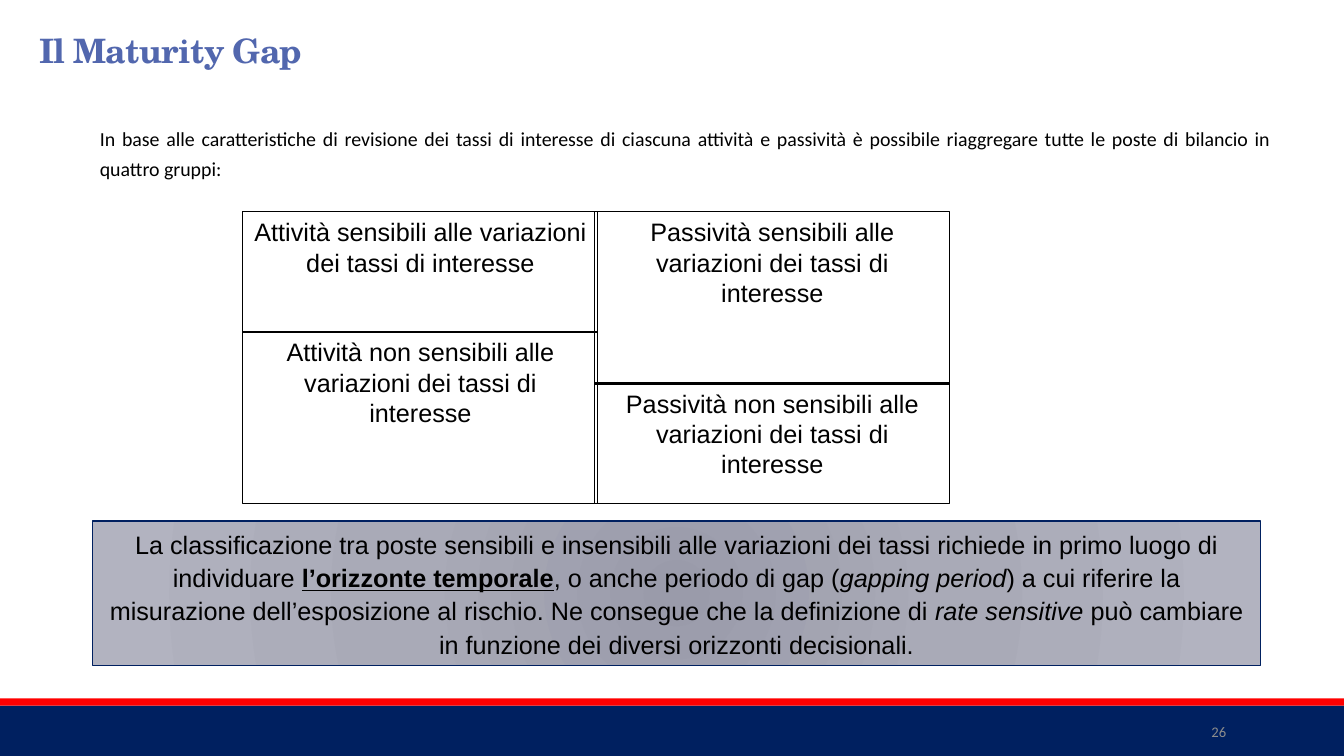
import pptx
import pptx.dml.color
import pptx.enum.shapes
import pptx.enum.text
import pptx.oxml
import pptx.oxml.ns
import pptx.util

Inches = pptx.util.Inches
Align = pptx.enum.text.PP_ALIGN
Anchor = pptx.enum.text.MSO_ANCHOR


class Theme:
    """Colours, fonts and type sizes of the slide."""
    navy, red, black = "002060", "FF0000", "000000"
    title_blue, grey = "5267AE", "8C8C8C"
    gradient = ((0, "9A9BAA"), (45, "A9AAB7"), (100, "B2B3C0"))
    title = {"name": "TeX Gyre Schola", "size": 24, "color": title_blue, "bold": True}
    intro = {"name": "Calibri", "size": 14.2, "color": black}
    body = {"name": "Arial", "size": 18, "color": black}
    number = {"name": "Calibri", "size": 10.5, "color": grey}


class SlideBuilder:
    def __init__(self, presentation, theme):
        self.theme = theme
        self.slide = presentation.slides.add_slide(presentation.slide_layouts[6])

    def fill_text(self, shape, runs, font, paragraph_format, frame_format=None):
        """Fill a shape with one paragraph made of (text, extra font values) runs."""
        frame = shape.text_frame
        frame_values = {"word_wrap": True, "vertical_anchor": Anchor.TOP}
        for name, value in {**frame_values, **(frame_format or {})}.items():
            setattr(frame, name, value)
        paragraph = frame.paragraphs[0]
        for name, value in paragraph_format.items():
            setattr(paragraph, name, value)
        for text, extra in runs:
            run = paragraph.add_run()
            run.text = text
            values = {**font, **extra}
            run.font.color.rgb = pptx.dml.color.RGBColor.from_string(values.pop("color"))
            values["size"] = pptx.util.Pt(values["size"])
            for name, value in values.items():
                setattr(run.font, name, value)

    def text(self, box, text, font, paragraph_format, frame_format=None):
        shape = self.slide.shapes.add_textbox(*map(Inches, box))
        self.fill_text(shape, [(text, {})], font, paragraph_format, frame_format)
        return shape

    def rectangle(self, box, fill=None, line=None, line_width=0.75):
        shape = self.slide.shapes.add_shape(
            pptx.enum.shapes.MSO_SHAPE.RECTANGLE, *map(Inches, box))
        shape.shadow.inherit = False
        for part, color in ((shape.fill, fill), (shape.line.fill, line)):
            if color:
                part.solid()
                part.fore_color.rgb = pptx.dml.color.RGBColor.from_string(color)
            else:
                part.background()
        if line:
            shape.line.width = pptx.util.Pt(line_width)
        return shape

    def radial_fill(self, shape, stops):
        """Give a shape a circular gradient around its centre."""
        shape.fill.gradient()
        properties = shape._element.spPr
        stop_xml = "".join(
            f'<a:gs pos="{position * 1000}"><a:srgbClr val="{color}"/></a:gs>'
            for position, color in stops)
        gradient = pptx.oxml.parse_xml(
            f'<a:gradFill {pptx.oxml.ns.nsdecls("a")} rotWithShape="1">'
            f'<a:gsLst>{stop_xml}</a:gsLst><a:path path="circle">'
            '<a:fillToRect l="100000" t="100000" r="100000" b="100000"/>'
            '</a:path></a:gradFill>')
        properties.replace(properties.find(pptx.oxml.ns.qn("a:gradFill")), gradient)


def main():
    presentation = pptx.Presentation()
    presentation.slide_width = Inches(13.33)
    presentation.slide_height = Inches(7.5)
    theme = Theme()
    builder = SlideBuilder(presentation, theme)

    # Footer bands and page number
    builder.rectangle((0, 7, 13.33, 0.5), fill=theme.navy)
    builder.rectangle((0, 6.93, 13.33, 0.07), fill=theme.red)
    builder.text((10.83, 7.06, 1.43, 0.4), "26", theme.number,
                 {"alignment": Align.RIGHT}, {"vertical_anchor": Anchor.MIDDLE})

    # Title, slightly tightened
    title = builder.text((0.29, 0.31, 8.62, 0.5), "Il Maturity Gap", theme.title,
                         {"line_spacing": 0.85})
    title.text_frame.paragraphs[0].runs[0].font._element.set("spc", "-50")

    # Introduction
    side, edge = Inches(0.07), Inches(0.04)
    builder.text(
        (0.92, 1.14, 11.75, 1.12),
        "In base alle caratteristiche di revisione dei tassi di interesse di ciascuna "
        "attività e passività è possibile riaggregare tutte le poste di bilancio in "
        "quattro gruppi:",
        theme.intro, {"alignment": Align.JUSTIFY, "line_spacing": 1.3},
        {"margin_left": side, "margin_right": side,
         "margin_top": edge, "margin_bottom": edge})

    # Balance sheet: assets on the left, liabilities on the right
    top, short, tall, width = 2.1, 1.2, 1.71, 3.52
    columns = (("Attività", 2.41, (short, tall)), ("Passività", 5.9, (tall, short)))
    for item, left, heights in columns:
        tops = (top, top + heights[0] - 0.01)
        for kind, cell_top, height in zip(("sensibili", "non sensibili"), tops, heights):
            cell = builder.rectangle((left, cell_top, width, height), line=theme.black)
            builder.fill_text(
                cell, [(f"{item} {kind} alle variazioni dei tassi di interesse", {})],
                theme.body, {"alignment": Align.CENTER})

    # Concluding statement
    statement = builder.rectangle((0.92, 5.17, 11.58, 1.43), line=theme.navy, line_width=1)
    builder.radial_fill(statement, theme.gradient)
    builder.fill_text(statement, [
        ("La classificazione tra poste sensibili e insensibili alle variazioni dei tassi "
         "richiede in primo luogo di individuare ", {}),
        ("l’orizzonte temporale", {"bold": True, "underline": True}),
        (", o anche periodo di gap (", {}),
        ("gapping period", {"italic": True}),
        (") a cui riferire la misurazione dell’esposizione al rischio. Ne consegue che "
         "la definizione di ", {}),
        ("rate sensitive", {"italic": True}),
        (" può cambiare in funzione dei diversi orizzonti decisionali.", {}),
    ], theme.body, {"alignment": Align.CENTER, "line_spacing": 1.1})

    presentation.save("out.pptx")


if __name__ == "__main__":
    main()
